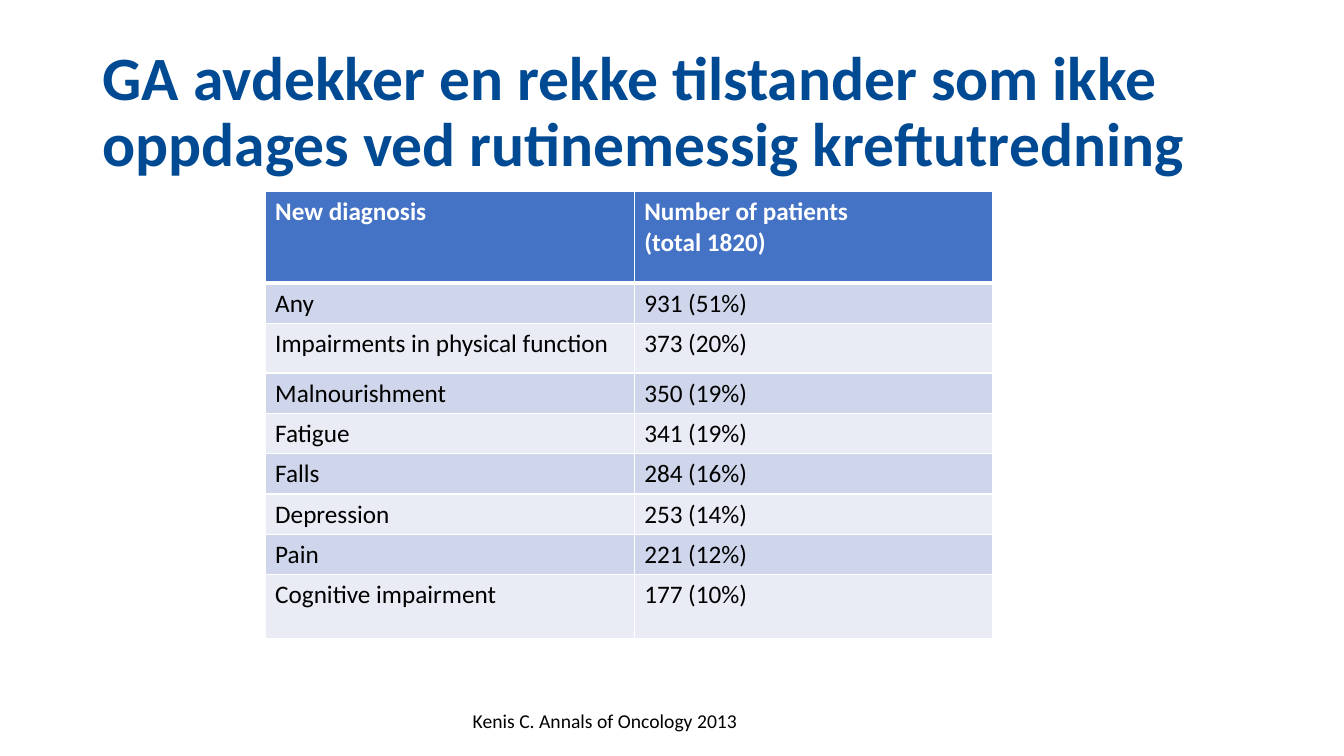
"""Build a slide with a table of diagnoses uncovered by geriatric assessment."""
from dataclasses import dataclass

from lxml import etree
from pptx import Presentation
from pptx.dml.color import RGBColor
from pptx.enum.text import MSO_ANCHOR
from pptx.oxml.ns import qn
from pptx.slide import Slide
from pptx.table import _Cell
from pptx.util import Emu, Pt

PX = 9144
FONT = "Calibri"
TOP, MIDDLE = MSO_ANCHOR.TOP, MSO_ANCHOR.MIDDLE
COLORS = {
    "title": "004A93",
    "header": "4472C4",
    "odd": "CFD5EA",
    "even": "E9EBF5",
    "white": "FFFFFF",
    "black": "000000",
}


@dataclass
class Label:
    text: str
    x: int
    y: int
    w: int
    h: int
    size: int
    color: str
    bold: bool = False
    anchor: MSO_ANCHOR = TOP
    spacing: float = 1.0


@dataclass
class Row:
    diagnosis: str
    patients: str
    height: int = 40


LABELS = [
    Label("GA avdekker en rekke tilstander som ikke oppdages ved rutinemessig kreftutredning",
          92, 40, 1150, 145, 44, "title", True, MIDDLE, 0.9),
    Label("Kenis C. Annals of Oncology 2013", 459, 698, 652, 61, 14, "black"),
]
TABLE_X, TABLE_Y = 263, 190
COLUMNS = [366, 355]
ROWS = [
    Row("New diagnosis", "Number of patients\n(total 1820)", 91),
    Row("Any", "931 (51%)"),
    Row("Impairments in physical function", "373 (20%)", 49),
    Row("Malnourishment", "350 (19%)"),
    Row("Fatigue", "341 (19%)"),
    Row("Falls", "284 (16%)"),
    Row("Depression", "253 (14%)"),
    Row("Pain", "221 (12%)"),
    Row("Cognitive impairment", "177 (10%)", 63),
]


def px(n: int) -> Emu:
    return Emu(n * PX)


def rgb(name: str) -> RGBColor:
    return RGBColor.from_string(COLORS[name])


def style_font(p, size: int, color: str, bold: bool) -> None:
    p.font.name = FONT
    p.font.size = Pt(size)
    p.font.bold = bold
    p.font.color.rgb = rgb(color)


def add_label(s: Slide, label: Label) -> None:
    sp = s.shapes.add_textbox(px(label.x), px(label.y), px(label.w), px(label.h))
    tf = sp.text_frame
    tf.word_wrap = True
    tf.vertical_anchor = label.anchor
    p = tf.paragraphs[0]
    p.text = label.text
    p.line_spacing = label.spacing
    style_font(p, label.size, label.color, label.bold)


def set_borders(cell: _Cell, top: int, bottom: int) -> None:
    tc_pr = cell._tc.get_or_add_tcPr()
    for side, width in (("L", 1), ("R", 1), ("T", top), ("B", bottom)):
        ln = etree.SubElement(tc_pr, qn(f"a:ln{side}"), w=str(Pt(width)))
        fill = etree.SubElement(ln, qn("a:solidFill"))
        etree.SubElement(fill, qn("a:srgbClr"), val=COLORS["white"])


def fill_cell(cell: _Cell, text: str, row: int) -> None:
    is_header = row == 0
    set_borders(cell, 3 if row == 1 else 1, 3 if is_header else 1)
    cell.fill.solid()
    cell.fill.fore_color.rgb = rgb("header" if is_header else "odd" if row % 2 else "even")
    cell.text = text
    for p in cell.text_frame.paragraphs:
        style_font(p, 18, "white" if is_header else "black", is_header)


def add_diagnosis_table(s: Slide) -> None:
    height = sum(row.height for row in ROWS)
    table = s.shapes.add_table(len(ROWS), len(COLUMNS), px(TABLE_X), px(TABLE_Y),
                               px(sum(COLUMNS)), px(height)).table
    for column, width in zip(table.columns, COLUMNS):
        column.width = px(width)
    for i, row in enumerate(ROWS):
        table.rows[i].height = px(row.height)
        for j, text in enumerate((row.diagnosis, row.patients)):
            fill_cell(table.cell(i, j), text, i)


def main() -> None:
    prs = Presentation()
    prs.slide_width, prs.slide_height = px(1333), px(750)
    s = prs.slides.add_slide(prs.slide_layouts[6])
    title, citation = LABELS
    add_label(s, title)
    add_diagnosis_table(s)
    add_label(s, citation)
    prs.save("out.pptx")


if __name__ == "__main__":
    main()
